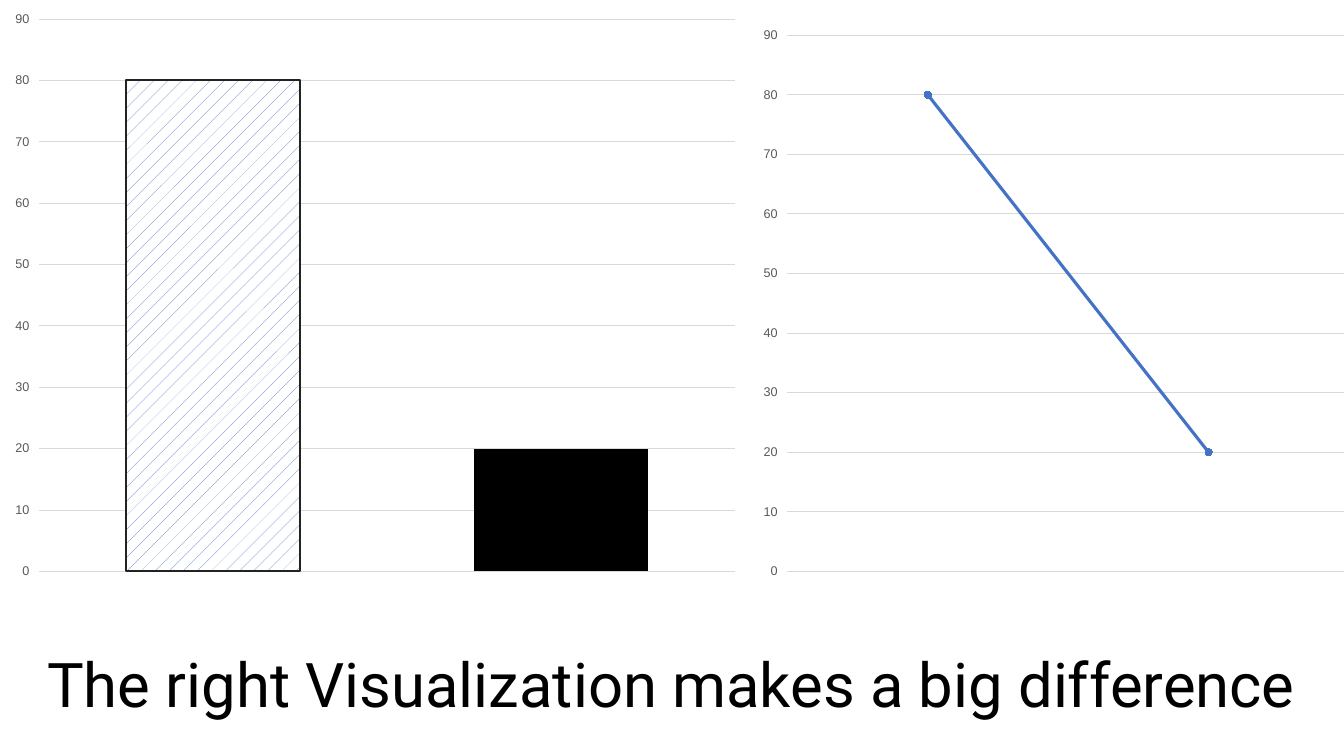
"""Build a slide comparing a bar chart and a line chart of the same values."""
from dataclasses import dataclass

from pptx import Presentation
from pptx.chart.chart import Chart
from pptx.chart.data import CategoryChartData
from pptx.dml.color import RGBColor
from pptx.enum.chart import XL_CHART_TYPE as ChartType
from pptx.enum.chart import XL_MARKER_STYLE as MarkerStyle
from pptx.enum.chart import XL_TICK_MARK as TickMark
from pptx.enum.dml import MSO_PATTERN as Pattern
from pptx.enum.text import MSO_AUTO_SIZE as AutoSize
from pptx.enum.text import PP_ALIGN as Align
from pptx.oxml import parse_xml
from pptx.oxml.ns import nsdecls
from pptx.slide import Slide
from pptx.util import Inches, Pt

BLACK, INK, WHITE, BLUE = "000000", "222222", "FFFFFF", "4472C4"
LABEL_GREY, GRID_GREY = "595959", "D9D9D9"
VALUES = (80, 20)


@dataclass(frozen=True)
class Box:
    left: float
    top: float
    width: float
    height: float


@dataclass(frozen=True)
class ChartPanel:
    kind: ChartType
    frame: Box
    plot: Box


BAR_PANEL = ChartPanel(ChartType.COLUMN_CLUSTERED, Box(0, 0, 7.44, 5.86), Box(0.39, 0.19, 6.9, 5.48))
LINE_PANEL = ChartPanel(ChartType.LINE_MARKERS, Box(7.44, 0.17, 6.06, 5.69), Box(7.81, 0.35, 5.57, 5.32))


def color(value: str) -> RGBColor:
    return RGBColor.from_string(value)


def fill_solid(fill, value: str) -> None:
    fill.solid()
    fill.fore_color.rgb = color(value)


def set_line(line, value: str, width: float) -> None:
    fill_solid(line.fill, value)
    line.width = Pt(width)


def place_plot(chart: Chart, panel: ChartPanel) -> None:
    frame, plot = panel.frame, panel.plot
    fractions = {
        "x": (plot.left - frame.left) / frame.width,
        "y": (plot.top - frame.top) / frame.height,
        "w": plot.width / frame.width,
        "h": plot.height / frame.height,
    }
    modes = "".join(f'<c:{axis}Mode val="edge"/>' for axis in "xy")
    sizes = "".join(f'<c:{name} val="{share:.4f}"/>' for name, share in fractions.items())
    plot_area = chart.element.xpath("c:chart/c:plotArea")[0]
    for layout in plot_area.xpath("c:layout"):
        plot_area.remove(layout)
    plot_area.insert(0, parse_xml(
        f'<c:layout {nsdecls("c")}><c:manualLayout><c:layoutTarget val="inner"/>'
        f"{modes}{sizes}</c:manualLayout></c:layout>"
    ))


def add_panel(slide: Slide, panel: ChartPanel) -> Chart:
    data = CategoryChartData()
    data.categories = ["1", "2"]
    data.add_series("Series 1", VALUES)
    frame = panel.frame
    chart = slide.shapes.add_chart(
        panel.kind, Inches(frame.left), Inches(frame.top),
        Inches(frame.width), Inches(frame.height), data,
    ).chart
    chart.has_legend = False
    chart.has_title = False
    chart.font.name, chart.font.size = "Arial", Pt(10)
    chart.font.color.rgb = color(BLACK)
    chart.plots[0].vary_by_categories = False
    chart.category_axis.visible = False
    axis = chart.value_axis
    axis.minimum_scale, axis.maximum_scale, axis.major_unit = 0, 90, 10
    axis.major_tick_mark = TickMark.OUTSIDE
    axis.format.line.fill.background()
    axis.has_major_gridlines = True
    set_line(axis.major_gridlines.format.line, GRID_GREY, 0.75)
    labels = axis.tick_labels.font
    labels.name, labels.size = "Arial", Pt(9)
    labels.color.rgb = color(LABEL_GREY)
    place_plot(chart, panel)
    return chart


def style_bars(chart: Chart) -> None:
    plot = chart.plots[0]
    plot.gap_width = 100
    series = plot.series[0]
    series.invert_if_negative = False
    fill_solid(series.format.fill, BLUE)
    hatched, solid = (series.points[index].format for index in range(len(VALUES)))
    hatched.fill.patterned()
    hatched.fill.pattern = Pattern.PERCENT_5
    hatched.fill.fore_color.rgb = color(BLUE)
    hatched.fill.back_color.rgb = color(WHITE)
    set_line(hatched.line, INK, 1.5)
    fill_solid(solid.fill, BLACK)
    solid.line.fill.background()


def style_marker(marker, value: str) -> None:
    marker.style, marker.size = MarkerStyle.CIRCLE, 5
    fill_solid(marker.format.fill, value)
    set_line(marker.format.line, value, 0.75)


def style_line(chart: Chart) -> None:
    series = chart.plots[0].series[0]
    series.smooth = False
    set_line(series.format.line, BLUE, 2.25)
    style_marker(series.marker, BLUE)
    first = series.points[0]
    style_marker(first.marker, INK)
    set_line(first.format.line, BLUE, 2.25)


def add_caption(slide: Slide, text: str) -> None:
    frame = slide.shapes.add_textbox(Inches(0), Inches(6.36), Inches(13.33), Inches(0.84)).text_frame
    frame.word_wrap = True
    frame.auto_size = AutoSize.SHAPE_TO_FIT_TEXT
    paragraph = frame.paragraphs[0]
    paragraph.alignment = Align.CENTER
    run = paragraph.add_run()
    run.text = text
    run.font.name, run.font.size = "Roboto", Pt(44)
    run.font.color.rgb = color(BLACK)


def main() -> None:
    presentation = Presentation()
    presentation.slide_width, presentation.slide_height = Inches(13.33), Inches(7.5)
    slide = presentation.slides.add_slide(presentation.slide_layouts[6])
    style_bars(add_panel(slide, BAR_PANEL))
    add_caption(slide, "The right Visualization makes a big difference")
    style_line(add_panel(slide, LINE_PANEL))
    presentation.save("out.pptx")


if __name__ == "__main__":
    main()
